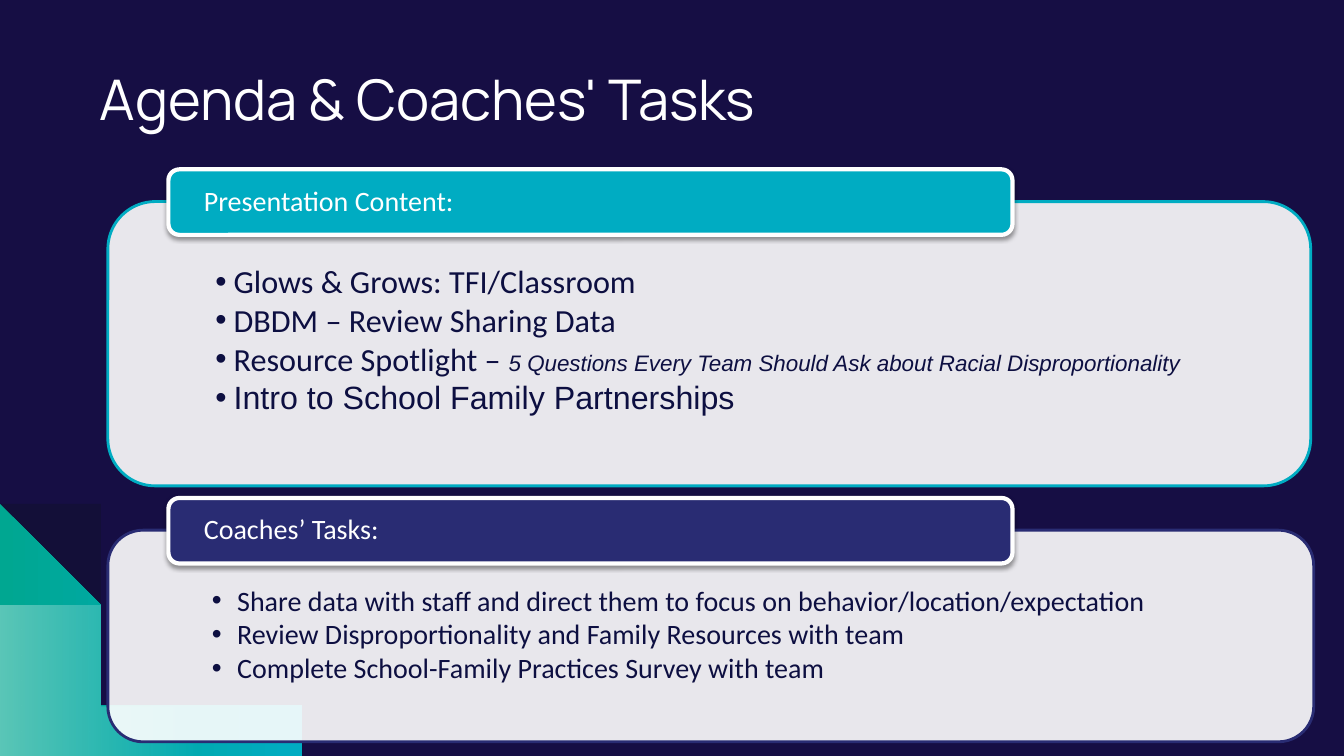
import lxml.etree
import pptx
import pptx.dml.color
import pptx.enum.shapes
import pptx.enum.text
import pptx.oxml.ns
import pptx.util

W, H = 13.33, 7.5
NAVY, INK, WHITE = "160E44", "0D0F41", "FFFFFF"
CYAN, GREEN, INDIGO = "00ACC2", "00A791", "292C73"
LEFT, TAB_H, OVERLAP = 1.07, 0.65, 0.32
Inches, Pt = pptx.util.Inches, pptx.util.Pt
qn = pptx.oxml.ns.qn
SHAPE = pptx.enum.shapes.MSO_SHAPE
ANCHOR = pptx.enum.text.MSO_ANCHOR


def rgb(color):
    return pptx.dml.color.RGBColor.from_string(color)


def child(parent, tag, **attrs):
    return lxml.etree.SubElement(parent, qn(tag), {k: str(v) for k, v in attrs.items()})


def set_alpha(fill, percent):
    for clr in fill._xPr.iter(qn("a:srgbClr")):
        child(clr, "a:alpha", val=percent * 1000)


def style(sp, color, line=None, width=0, alpha=100):
    sp.shadow.inherit = False
    sp.fill.solid()
    sp.fill.fore_color.rgb = rgb(color)
    if alpha < 100:
        set_alpha(sp.fill, alpha)
    if line:
        sp.line.color.rgb = rgb(line)
        sp.line.width = Pt(width)
    else:
        sp.line.fill.background()


def set_gradient(sp, stops):
    sp.fill.gradient()
    sp.fill.gradient_angle = 0
    for stop, (color, alpha) in zip(sp.fill.gradient_stops, stops):
        stop.color.rgb = rgb(color)
        clr = stop._gs.find(qn("a:srgbClr"))
        if alpha < 100:
            child(clr, "a:alpha", val=alpha * 1000)


def add_shadow(sp):
    effects = sp._element.spPr.find(qn("a:effectLst"))
    shadow = child(effects, "a:outerShdw", blurRad=Pt(3.1), dist=Pt(1.6),
                   dir=5400000, algn="ctr", rotWithShape=0)
    child(child(shadow, "a:srgbClr", val="000000"), "a:alpha", val=38000)


def frame(sp, left, top, anchor):
    tf = sp.text_frame
    tf.word_wrap = True
    tf.margin_left = tf.margin_right = Inches(left)
    tf.margin_top = tf.margin_bottom = Inches(top)
    tf.vertical_anchor = anchor
    return tf


def add_text(p, text, size=20, font="Calibri", color=INK, italic=False):
    p.alignment = pptx.enum.text.PP_ALIGN.LEFT
    r = p.add_run()
    r.text = text
    r.font.size = Pt(size)
    r.font.name = font
    r.font.italic = italic
    r.font.color.rgb = rgb(color)


def add_bullet(p, indent):
    pPr = p._p.get_or_add_pPr()
    pPr.set("marL", str(Inches(indent)))
    pPr.set("indent", str(-Inches(indent)))
    child(pPr, "a:buFont", typeface="Arial")
    child(pPr, "a:buChar", char="•")


def add_swoosh(slide, top, width, c1, c2):
    pts = [(0, top), c1, c2, (width, H)]
    curve = []
    for i in range(41):
        t = i / 40
        weights = ((1 - t) ** 3, 3 * t * (1 - t) ** 2, 3 * t * t * (1 - t), t ** 3)
        curve.append(tuple(sum(w * pt[axis] for w, pt in zip(weights, pts)) for axis in (0, 1)))
    builder = slide.shapes.build_freeform(*curve[0], scale=Inches(1))
    builder.add_line_segments(curve[1:] + [(0, H)], close=True)
    sp = builder.convert_to_shape()
    style(sp, "12102F", alpha=54)
    return sp


def add_corner(slide):
    add_swoosh(slide, 4.13, 3.03, (0.98, 7.39), (3.03, H))
    set_gradient(add_swoosh(slide, 4.22, 2.95, (0.95, 7.39), (2.95, H)),
                 [(GREEN, 100), (CYAN, 100)])
    set_gradient(add_swoosh(slide, 5.06, 2.16, (0, 5.06), (0.91, 7.35)),
                 [(WHITE, 36), (WHITE, 0)])


def add_title(slide, box, text):
    sp = slide.shapes.add_textbox(*map(Inches, box))
    tf = frame(sp, 0.1, 0.1, ANCHOR.MIDDLE)
    add_text(tf.paragraphs[0], text, size=40, font="Manrope", color=WHITE)


def add_section(slide, box, heading, items, color, indent, spacing, after):
    x, y, w, h = box
    panel = slide.shapes.add_shape(SHAPE.ROUNDED_RECTANGLE, *map(Inches, box))
    style(panel, WHITE, color, 2, alpha=90)
    tf = frame(panel, 0.93, 0.46, ANCHOR.TOP)
    for i, runs in enumerate(items):
        p = tf.add_paragraph() if i else tf.paragraphs[0]
        p.line_spacing = spacing
        p.space_after = Pt(after)
        add_bullet(p, indent)
        for text, look in runs:
            add_text(p, text, **look)

    tab_box = (x + 0.6, y - OVERLAP, 0.7 * 11.96, TAB_H)
    tab = slide.shapes.add_shape(SHAPE.ROUNDED_RECTANGLE, *map(Inches, tab_box))
    style(tab, color, WHITE, 3)
    add_shadow(tab)
    tf = frame(tab, 0.32, 0, ANCHOR.MIDDLE)
    tf.paragraphs[0].line_spacing = 0.9
    add_text(tf.paragraphs[0], heading, color=WHITE)


def main():
    prs = pptx.Presentation()
    prs.slide_width, prs.slide_height = Inches(W), Inches(H)
    slide = prs.slides.add_slide(prs.slide_layouts[6])
    slide.background.fill.solid()
    slide.background.fill.fore_color.rgb = rgb(NAVY)

    large = {"size": 23}
    content = [
        [("Glows & Grows: TFI/Classroom", large)],
        [("DBDM – Review Sharing Data", large)],
        [("Resource Spotlight – ", large),
         ("5 Questions Every Team Should Ask about Racial Disproportionality",
          {"size": 16, "font": "Arial", "italic": True})],
        [("Intro to School Family Partnerships", {"size": 23, "font": "Arial"})],
    ]
    tasks = [[(text, {})] for text in (
        "Share data with staff and direct them to focus on behavior/location/expectation",
        "Review Disproportionality and Family Resources with team",
        "Complete School-Family Practices Survey with team",
    )]

    add_corner(slide)
    add_section(slide, (LEFT, 2, 11.93, 2.82), "Presentation Content:", content,
                CYAN, indent=0.18, spacing=1, after=0)
    add_section(slide, (LEFT, 5.26, 11.96, 2.1), "Coaches’ Tasks:", tasks,
                INDIGO, indent=0.25, spacing=0.9, after=2.4)
    add_title(slide, (0.89, 0.51, 10.26, 0.92), "Agenda & Coaches' Tasks")
    prs.save("out.pptx")


if __name__ == "__main__":
    main()
